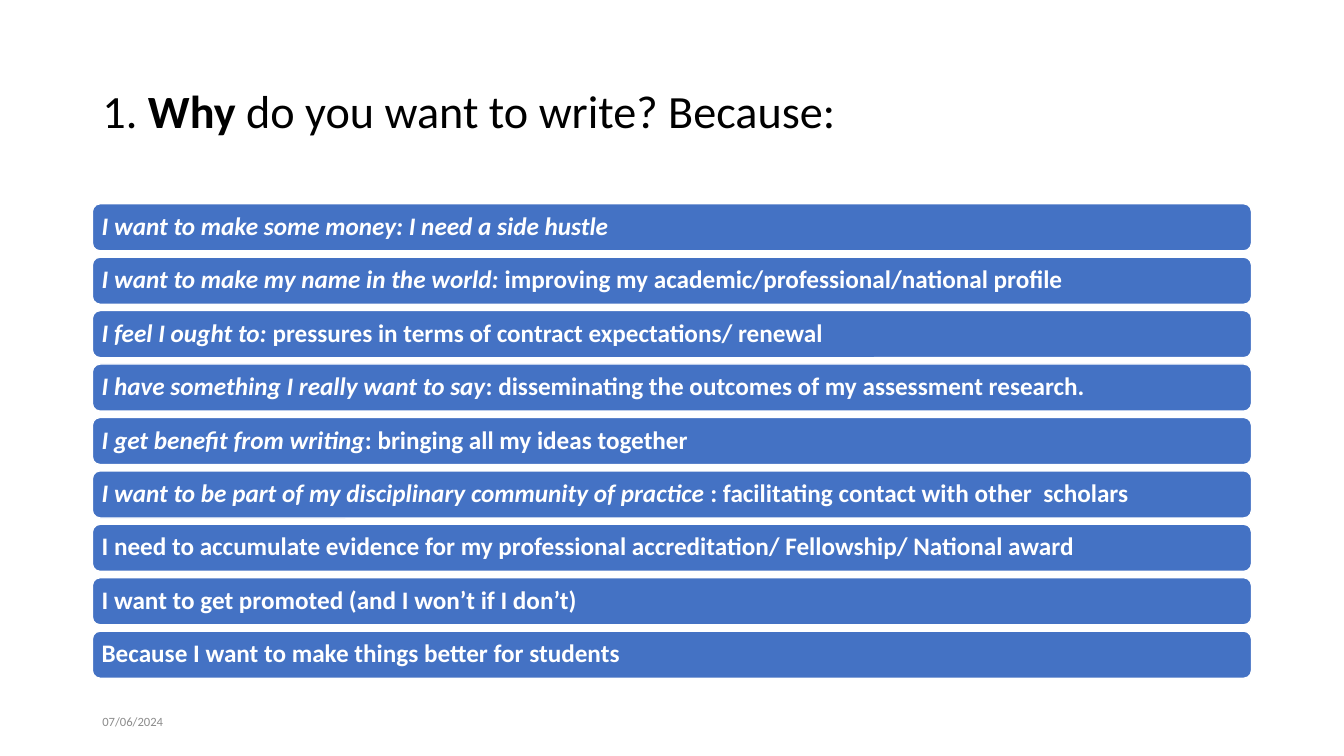
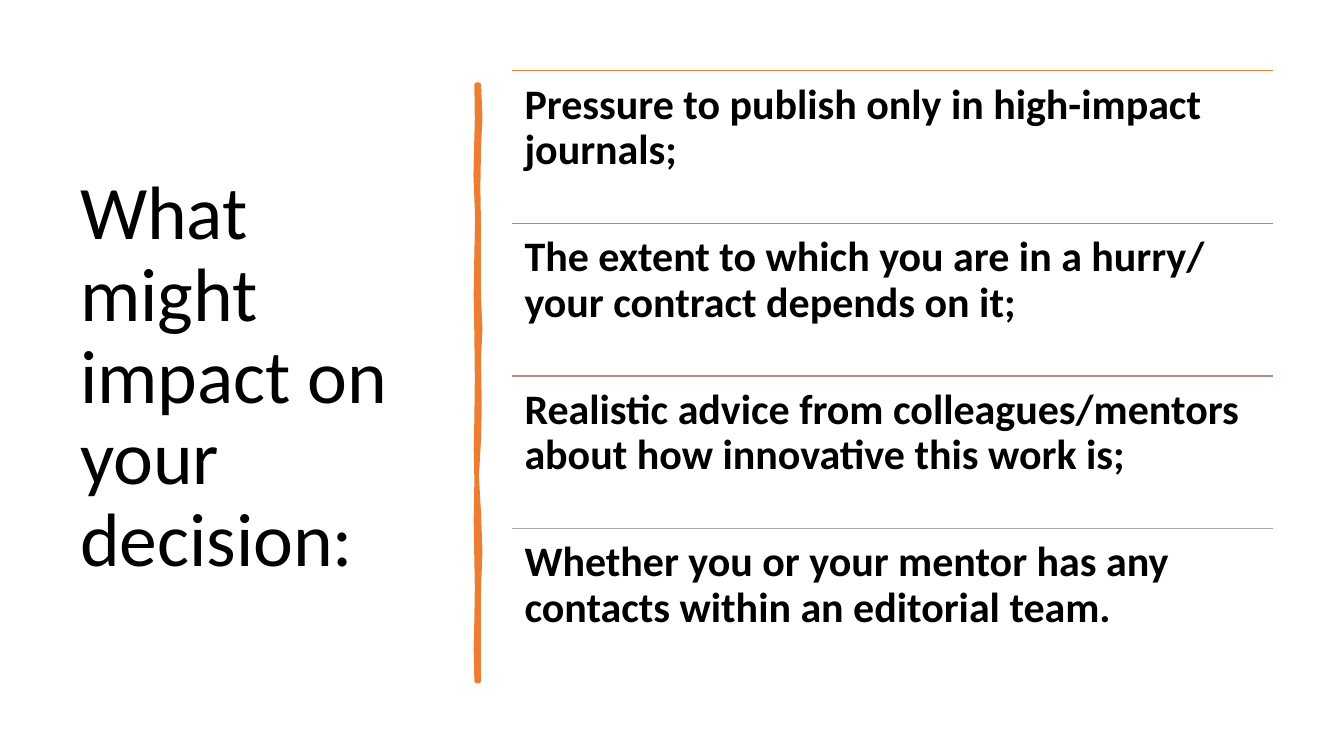
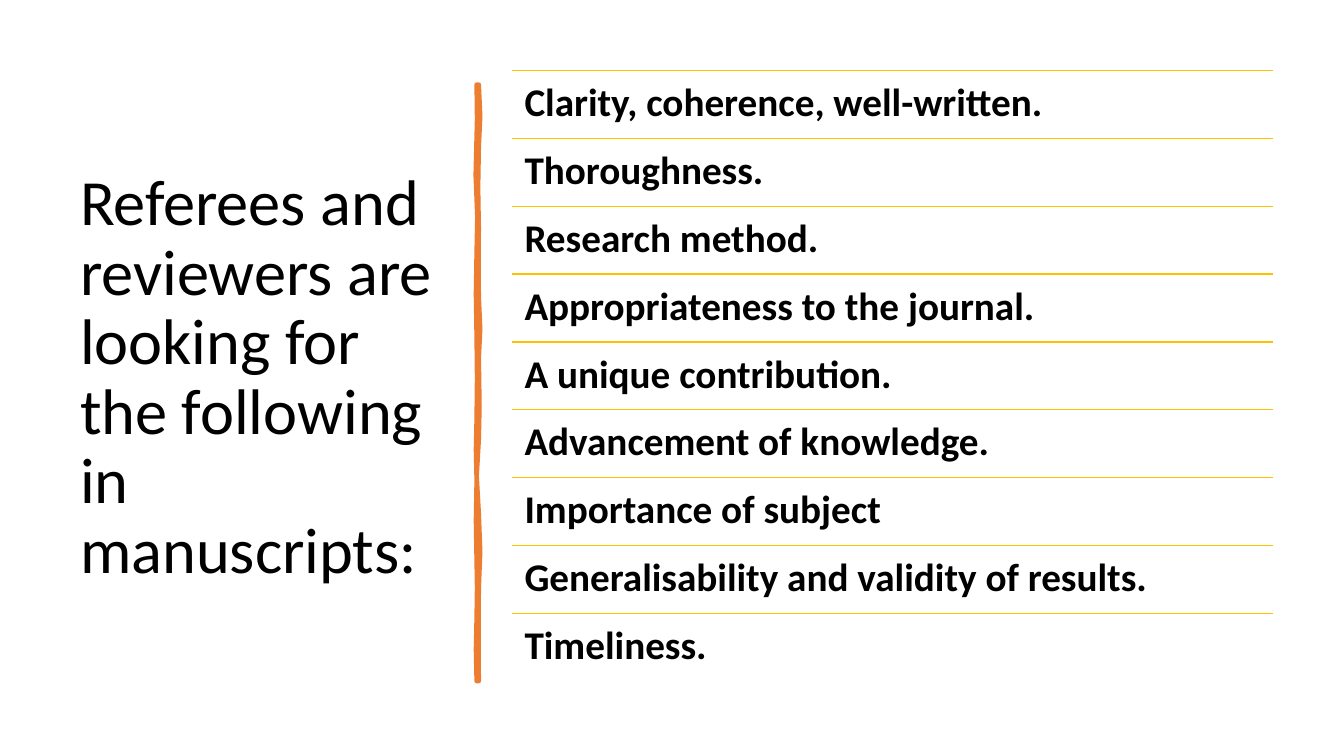
import pptx
import pptx.util
import pptx.dml.color
import pptx.enum.shapes
import pptx.enum.text
from dataclasses import dataclass
from lxml import etree

Pt = pptx.util.Pt
Anchor = pptx.enum.text.MSO_ANCHOR


@dataclass(frozen=True)
class Theme:
    font: str = "Calibri"
    ink: str = "000000"
    white: str = "FFFFFF"
    blue: str = "4472C4"
    orange: str = "ED7D31"
    gold: str = "FFC000"
    grey: str = "8C8C8C"
    fade: tuple = ("ED7D31", "D17B5C", "B98A82", "A5A5A5")
    bar: float = 18
    date: float = 9
    lead: float = 0.9


LOOK = Theme()

# Each reason is an italic opening and a plain ending.
WHY = {
    "title": [("1. ", ""), ("Why", "b"), (" do you want to write? Because:", "")],
    "size": 33,
    "date": "07/06/2024",
    "reasons": [
        ("I want to make some money: I need a side hustle", ""),
        ("I want to make my name in the world: ",
         "improving my academic/professional/national profile"),
        ("I feel I ought to: ", "pressures in terms of contract expectations/ renewal"),
        ("I have something I really want to say",
         ": disseminating the outcomes of my assessment research."),
        ("I get benefit from writing", ": bringing all my ideas together"),
        ("I want to be part of my disciplinary community of practice ",
         ": facilitating contact with other  scholars"),
        ("", "I need to accumulate evidence for my professional accreditation/ "
             "Fellowship/ National award"),
        ("", "I want to get promoted (and I won’t if I don’t)"),
        ("", "Because I want to make things better for students"),
    ],
}

LISTS = [
    {
        "title": "What might impact on your decision:",
        "size": 54,
        "text": 30,
        "rules": LOOK.fade,
        "rows": [
            "Pressure to publish only in high-impact journals;",
            "The extent to which you are in a hurry/ your contract depends on it;",
            "Realistic advice from colleagues/mentors about how innovative this work is;",
            "Whether you or your mentor has any contacts within an editorial team.",
        ],
    },
    {
        "title": "Referees and reviewers are looking for the following in manuscripts:",
        "size": 46,
        "text": 28,
        "rules": (LOOK.gold,) * 9,
        "rows": [
            "Clarity, coherence, well-written.",
            "Thoroughness.",
            "Research method.",
            "Appropriateness to the journal.",
            "A unique contribution.",
            "Advancement of knowledge.",
            "Importance of subject",
            "Generalisability and validity of results.",
            "Timeliness.",
        ],
    },
]

# Outline of the hand-drawn stroke: down its right edge, up its left edge.
STROKE = [
    (342, 60.5), (343, 83), (342, 105), (341.5, 134), (342, 163), (341.8, 187),
    (342, 212), (343, 235), (342, 256), (342.5, 290), (342, 314), (340.5, 340),
    (342, 367), (343, 394), (342, 420), (341.8, 453), (342, 486.5),
    (340.5, 486.5), (340, 464), (340.5, 441), (340.8, 420), (340.5, 401),
    (340, 372), (340.5, 343), (340, 321), (340.5, 299), (340.8, 270),
    (340.5, 241), (340, 210), (340.5, 180), (341, 155), (339.8, 125),
    (340.8, 85), (340.5, 60.5),
]


def tint(code):
    return pptx.dml.color.RGBColor.from_string(code)


def write(frame, runs, size, color, anchor, inset=None, lead=LOOK.lead):
    """Put (text, marks) runs in a frame; marks hold b for bold, i for italic."""
    frame.word_wrap = True
    frame.auto_size = pptx.enum.text.MSO_AUTO_SIZE.NONE
    frame.vertical_anchor = anchor
    if inset is not None:
        frame.margin_left = frame.margin_right = Pt(inset)
        frame.margin_top = frame.margin_bottom = Pt(inset)
    para = frame.paragraphs[0]
    para.alignment = pptx.enum.text.PP_ALIGN.LEFT
    para.line_spacing = lead
    for text, marks in runs:
        run = para.add_run()
        run.text = text
        font = run.font
        font.name, font.size = LOOK.font, Pt(size)
        font.bold, font.italic = "b" in marks, "i" in marks
        font.color.rgb = tint(color)


def paint(shape, fill, edge, width):
    shape.shadow.inherit = False
    shape.fill.solid()
    shape.fill.fore_color.rgb = tint(fill)
    shape.line.color.rgb = tint(edge)
    shape.line.width = Pt(width)


def start(deck, runs, size, box):
    """Add a slide with its title set in the given box."""
    slide = deck.slides.add_slide(deck.slide_layouts[5])
    title = slide.shapes.title
    title.left, title.top, title.width, title.height = map(Pt, box)
    write(title.text_frame, runs, size, LOOK.ink, Anchor.MIDDLE)
    return slide


def rule(slide, left, top, width, color):
    line = slide.shapes.add_connector(
        pptx.enum.shapes.MSO_CONNECTOR.STRAIGHT,
        Pt(left), Pt(top), Pt(left + width), Pt(top))
    line.line.color.rgb = tint(color)
    line.line.width = Pt(1)
    etree.SubElement(line._element.spPr, pptx.oxml.ns.qn("a:effectLst"))


def bars(deck, data):
    left, top, width, high, step = 66, 145.5, 828, 33.7, 38.16
    slide = start(deck, data["title"], data["size"], (left, 29, width, 104.5))
    for i, (lean, plain) in enumerate(data["reasons"]):
        bar = slide.shapes.add_shape(
            pptx.enum.shapes.MSO_SHAPE.ROUNDED_RECTANGLE,
            Pt(left), Pt(top + i * step), Pt(width), Pt(high))
        paint(bar, LOOK.blue, LOOK.white, 1)
        runs = [run for run in ((lean, "bi"), (plain, "b")) if run[0]]
        write(bar.text_frame, runs, LOOK.bar, LOOK.white, Anchor.MIDDLE, 5)
    date = slide.shapes.add_textbox(Pt(left), Pt(500.5), Pt(216), Pt(29))
    write(date.text_frame, [(data["date"], "")], LOOK.date, LOOK.grey,
          Anchor.MIDDLE, lead=1.0)


def rows(deck, data):
    left, top, width, high = 366, 50.5, 543.5, 436
    slide = start(deck, [(data["title"], "")], data["size"], (50, top, 269, 440))
    pen = slide.shapes.build_freeform(*map(Pt, STROKE[0]))
    pen.add_line_segments([(Pt(x), Pt(y)) for x, y in STROKE[1:]], close=True)
    paint(pen.convert_to_shape(), LOOK.orange, LOOK.orange, 3.25)
    step = high / len(data["rows"])
    for i, (text, color) in enumerate(zip(data["rows"], data["rules"])):
        y = top + i * step
        rule(slide, left, y, width, color)
        box = slide.shapes.add_textbox(Pt(left), Pt(y), Pt(width), Pt(step))
        write(box.text_frame, [(text, "b")], data["text"], LOOK.ink,
              Anchor.TOP, 8.64)


def main():
    deck = pptx.Presentation()
    deck.slide_width, deck.slide_height = Pt(960), Pt(540)
    bars(deck, WHY)
    for data in LISTS:
        rows(deck, data)
    deck.save("out.pptx")


if __name__ == "__main__":
    main()
